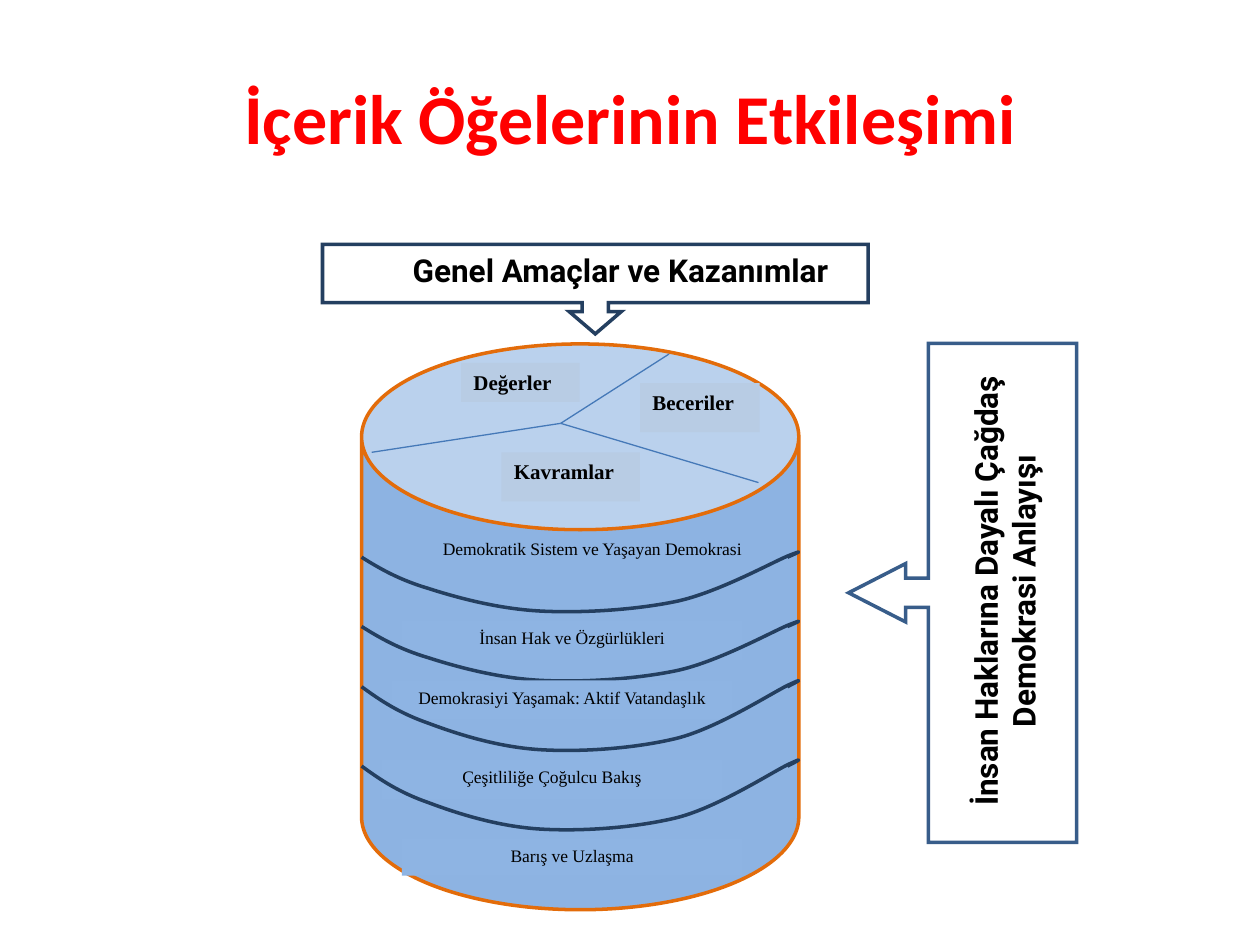
from pptx import Presentation
from pptx.dml.color import RGBColor
from pptx.enum.shapes import MSO_CONNECTOR as CON, MSO_SHAPE as SHAPE
from pptx.enum.text import MSO_ANCHOR as ANCHOR, MSO_AUTO_SIZE as AUTO, PP_ALIGN as ALIGN
from pptx.oxml.ns import qn
from pptx.util import Pt
from lxml.etree import SubElement

SCALE = 9144
COLORS = {
    "title": "FF0000", "text": "000000", "body": "8DB3E2", "topic": "8EB4E3",
    "rim": "E36C0A", "wave": "243F60", "divider": "4579B8", "label": "B8CCE4",
    "side": "385D8A",
}
TITLE = {"size": Pt(40), "name": "Calibri", "bold": True}
CALLOUT = {"size": Pt(18), "name": "Roboto", "bold": True}
LABEL = {"size": Pt(12), "name": "Times New Roman", "bold": True}
TOPIC = {"size": Pt(10), "name": "Times New Roman", "bold": False}

WAVE_SIZE = (347, 55)
WAVE_START = (0, 5)
WAVE_CURVES = [
    ((15, 16), (30, 26), (53, 34)),
    ((77, 43), (109, 53), (142, 55)),
    ((175, 57), (217, 54), (250, 46)),
    ((282, 38), (324, 11), (338, 4)),
    ((353, -3), (346, 1), (338, 5)),
]


def px(*values):
    return [round(v * SCALE) for v in values]


def rgb(name):
    return RGBColor.from_string(COLORS[name])


def set_line(s, color, width):
    s.line.color.rgb = rgb(color)
    s.line.width = Pt(width)


def set_text(s, text, fmt, color="text", align=ALIGN.CENTER, anchor=ANCHOR.TOP):
    tf = s.text_frame
    tf.word_wrap = True
    tf.vertical_anchor = anchor
    p = tf.paragraphs[0]
    p.alignment = align
    r = p.add_run()
    r.text = text
    for name, value in fmt.items():
        setattr(r.font, name, value)
    r.font.color.rgb = rgb(color)


def add_shape(slide, kind, box, fill=None, line=None, adj=()):
    s = slide.shapes.add_shape(kind, *px(*box))
    s.shadow.inherit = False
    for i, value in enumerate(adj):
        s.adjustments[i] = value
    if fill:
        s.fill.solid()
        s.fill.fore_color.rgb = rgb(fill)
    else:
        s.fill.background()
    if line:
        set_line(s, line, 2)
        SubElement(s.line._get_or_add_ln(), qn("a:miter"), lim="800000")
    else:
        s.line.fill.background()
    return s


def add_divider(slide, start, end):
    c = slide.shapes.add_connector(CON.STRAIGHT, *px(*start, *end))
    set_line(c, "divider", 0.75)
    SubElement(c._element.spPr, qn("a:effectLst"))


def add_points(path_el, tag, points):
    step = SubElement(path_el, qn(tag))
    for x, y in points:
        SubElement(step, qn("a:pt"), x=str(x * SCALE), y=str(y * SCALE))


def add_wave(slide, box):
    x, y, w, h = box
    fb = slide.shapes.build_freeform(*px(x, y))
    fb.add_line_segments([px(x + w, y + h)], close=False)
    s = fb.convert_to_shape()
    s.shadow.inherit = False
    s.fill.background()
    set_line(s, "wave", 2)
    outline = s._element.spPr.find(".//" + qn("a:path"))
    for step in list(outline):
        outline.remove(step)
    for name, value in zip("wh", px(*WAVE_SIZE)):
        outline.set(name, str(value))
    add_points(outline, "a:moveTo", [WAVE_START])
    for curve in WAVE_CURVES:
        add_points(outline, "a:cubicBezTo", curve)


def add_title(slide, box):
    s = slide.shapes.title
    s.left, s.top, s.width, s.height = px(*box)
    set_text(s, "İçerik Öğelerinin Etkileşimi", TITLE, "title", anchor=ANCHOR.MIDDLE)


def add_cylinder(slide, box):
    x, y, w, h = box
    add_shape(slide, SHAPE.CAN, box, "body", "rim", [0.425])

    def add_topics(topics):
        for text, dx, dy, height, fill in topics:
            s = add_shape(slide, SHAPE.RECTANGLE, (x + dx, y + dy, 270, height), fill)
            set_text(s, text, TOPIC)

    def add_waves(waves):
        for dy, height in waves:
            add_wave(slide, (x, y + dy, w, height))

    add_topics([
        ("Demokratik Sistem ve Yaşayan Demokrasi", 48, 149, 31, "body"),
        ("İnsan Hak ve Özgürlükleri", 32, 220, 31, "topic"),
    ])
    add_waves([(165, 47), (220, 47)])
    add_topics([
        ("Demokrasiyi Yaşamak: Aktif Vatandaşlık", 24, 267, 31, "topic"),
        ("Çeşitliliğe Çoğulcu Bakış", 16, 330, 31, "topic"),
        ("Barış ve Uzlaşma", 32, 393, 29, "topic"),
    ])
    add_waves([(267, 55), (330, 55)])

    hub = (x + 158, y + 63)
    for dx, dy in [(244, 8), (8, 86), (315, 110)]:
        add_divider(slide, hub, (x + dx, y + dy))
    for text, dx, dy, width, height in [
        ("Değerler", 79, 15, 94, 31),
        ("Kavramlar", 111, 86, 110, 39),
        ("Beceriler", 221, 31, 95, 39),
    ]:
        s = add_shape(slide, SHAPE.RECTANGLE, (x + dx, y + dy, width, height), "label")
        set_text(s, text, LABEL, align=ALIGN.LEFT)


def add_callout(slide, box, line, head, text, text_box, rotation=0, text_rotation=0):
    x, y, w, h = box
    dx, dy, tw, th = text_box
    s = add_shape(slide, SHAPE.DOWN_ARROW_CALLOUT, box, None, line,
                  [head, head, 0.25, 0.65])
    s.rotation = rotation
    tb = slide.shapes.add_textbox(*px(x + dx, y + dy, tw, th))
    tb.rotation = text_rotation
    set_text(tb, text, CALLOUT, anchor=ANCHOR.MIDDLE)
    tb.text_frame.auto_size = AUTO.SHAPE_TO_FIT_TEXT


def main():
    prs = Presentation()
    prs.slide_width, prs.slide_height = px(1000, 750)
    slide = prs.slides.add_slide(prs.slide_layouts[5])
    add_title(slide, (50, 30, 900, 125))
    add_cylinder(slide, (287, 273, 347, 449))
    add_callout(slide, (256, 194, 433, 71), "wave", 0.292,
                "Genel Amaçlar ve Kazanımlar", (8, 0, 457, 40))
    add_callout(slide, (566, 380, 396, 181), "side", 0.128,
                "İnsan Haklarına Dayalı Çağdaş Demokrasi Anlayışı",
                (50, 54, 362, 70), 90, 270)
    prs.save("out.pptx")


if __name__ == "__main__":
    main()
